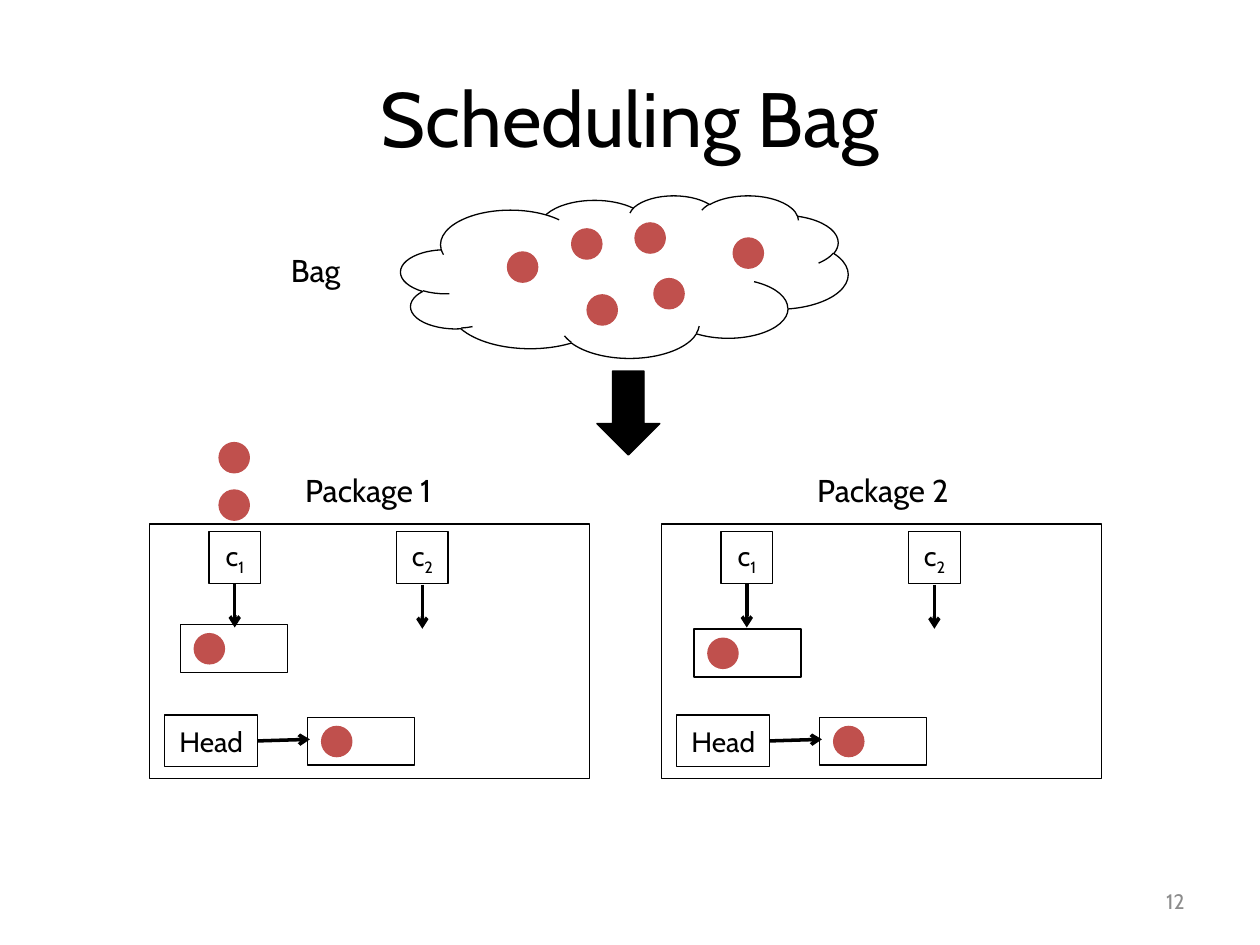
from lxml import etree
from pptx import Presentation
from pptx.dml.color import RGBColor
from pptx.enum.shapes import MSO_CONNECTOR, MSO_SHAPE
from pptx.enum.text import MSO_ANCHOR, PP_ALIGN
from pptx.oxml.ns import qn
from pptx.util import Pt

BLACK = RGBColor(0x00, 0x00, 0x00)
RED = RGBColor(0xC0, 0x50, 0x4D)
GRAY = RGBColor(0x8C, 0x8C, 0x8C)
FONT = "Cabin"

RECT, OVAL = MSO_SHAPE.RECTANGLE, MSO_SHAPE.OVAL
CLOUD, DOWN = MSO_SHAPE.CLOUD, MSO_SHAPE.DOWN_ARROW
LINE = MSO_CONNECTOR.STRAIGHT
LEFT, CENTER, RIGHT = PP_ALIGN.LEFT, PP_ALIGN.CENTER, PP_ALIGN.RIGHT
TOP, MIDDLE = MSO_ANCHOR.TOP, MSO_ANCHOR.MIDDLE

DOT = 17.3           # task diameter
CORE = 29.5          # core box side, also the head box height
QUEUE = (61.2, 27.4)
BAG_DOTS = [(290, 144), (326.7, 130.8), (362.9, 127.4),
            (419, 136), (335.5, 168.5), (373.7, 159.2)]


def add_run(par, text, size, color=BLACK, sub=False):
    run = par.add_run()
    run.text = text
    run.font.name = FONT
    run.font.size = Pt(size)
    run.font.color.rgb = color
    if sub:
        run.font._element.set("baseline", "-25000")


def add_shape(slide, kind, x, y, w, h, fill=None, line=BLACK):
    shape = slide.shapes.add_shape(kind, Pt(x), Pt(y), Pt(w), Pt(h))
    shape.shadow.inherit = False
    if fill is None:
        shape.fill.background()
    else:
        shape.fill.solid()
        shape.fill.fore_color.rgb = fill
    shape.line.color.rgb = line
    shape.line.width = Pt(0.75)
    return shape


def add_box(slide, x, y, w, text, sub=""):
    frame = add_shape(slide, RECT, x, y, w, CORE).text_frame
    frame.word_wrap = False
    frame.vertical_anchor = MIDDLE
    par = frame.paragraphs[0]
    par.alignment = CENTER
    add_run(par, text, 16)
    if sub:
        add_run(par, sub, 16, sub=True)


def add_dot(slide, x, y):
    add_shape(slide, OVAL, x, y, DOT, DOT, RED, RED)


def add_queue(slide, x, y):
    add_dot(slide, x + 8, y + 5.3)
    add_shape(slide, RECT, x, y, *QUEUE)


def add_arrow(slide, x1, y1, x2, y2):
    arrow = slide.shapes.add_connector(LINE, Pt(x1), Pt(y1), Pt(x2), Pt(y2))
    arrow.line.color.rgb = BLACK
    arrow.line.width = Pt(2)
    etree.SubElement(arrow.line._get_or_add_ln(), qn("a:tailEnd"), type="arrow")
    etree.SubElement(arrow._element.spPr, qn("a:effectLst"))


def add_label(slide, x, y, w, text, size=18, color=BLACK,
              align=LEFT, anchor=TOP, wrap=False):
    frame = slide.shapes.add_textbox(Pt(x), Pt(y), Pt(w), Pt(29)).text_frame
    frame.word_wrap = wrap
    frame.vertical_anchor = anchor
    par = frame.paragraphs[0]
    par.alignment = align
    add_run(par, text, size, color)


def add_title(slide, text):
    title = slide.shapes.title
    title.left, title.top = Pt(36), Pt(21.6)
    title.width, title.height = Pt(648), Pt(90)
    frame = title.text_frame
    frame.vertical_anchor = MIDDLE
    par = frame.paragraphs[0]
    par.alignment = CENTER
    add_run(par, text, 44)


def add_package(slide, x, name, wide, queue):
    """Draw one package; queue is the place of the first core's queue."""
    top = 299.5
    add_shape(slide, RECT, x, top, 251.3, 145.4)
    add_label(slide, x + 81.7, 265.7, wide, name)
    # Cores, each with an arrow to its queue
    for i in range(2):
        left = x + 33.8 + 107.2 * i
        mid = left + CORE / 2
        add_box(slide, left, top + 4.4, CORE, "c", str(i + 1))
        add_arrow(slide, mid, 333.4 + 0.7 * i, mid, 358.6 + 0.7 * i)
    add_queue(slide, *queue)
    # Head of the package list
    add_box(slide, x + 8.5, 408.6, 53.2, "Head")
    add_arrow(slide, x + 61.7, 423.4, x + 91.5, 422.5)
    add_queue(slide, x + 90.2, 409.8)


def main():
    deck = Presentation()
    deck.slide_width, deck.slide_height = Pt(720), Pt(540)
    slide = deck.slides.add_slide(deck.slide_layouts[5])
    add_title(slide, "Scheduling Bag")

    # Bag of tasks
    add_label(slide, 159.1, 139.8, 43.9, "Bag")
    add_shape(slide, CLOUD, 229, 111.6, 255.6, 92.9)
    for x, y in BAG_DOTS:
        add_dot(slide, x, y)
    add_shape(slide, DOWN, 341.1, 212, 36, 48, BLACK)

    # Packages
    add_package(slide, 85.6, "Package 1", 88.6, (103, 356.8))
    add_package(slide, 378.2, "Package 2", 95, (396.5, 359.4))

    # Tasks waiting for the first core
    for y in (252.9, 280):
        add_dot(slide, 125.2, y)

    # Slide number
    add_label(slide, 516, 500.5, 168, "12", 12, GRAY, RIGHT, MIDDLE, True)
    deck.save("out.pptx")


if __name__ == "__main__":
    main()
